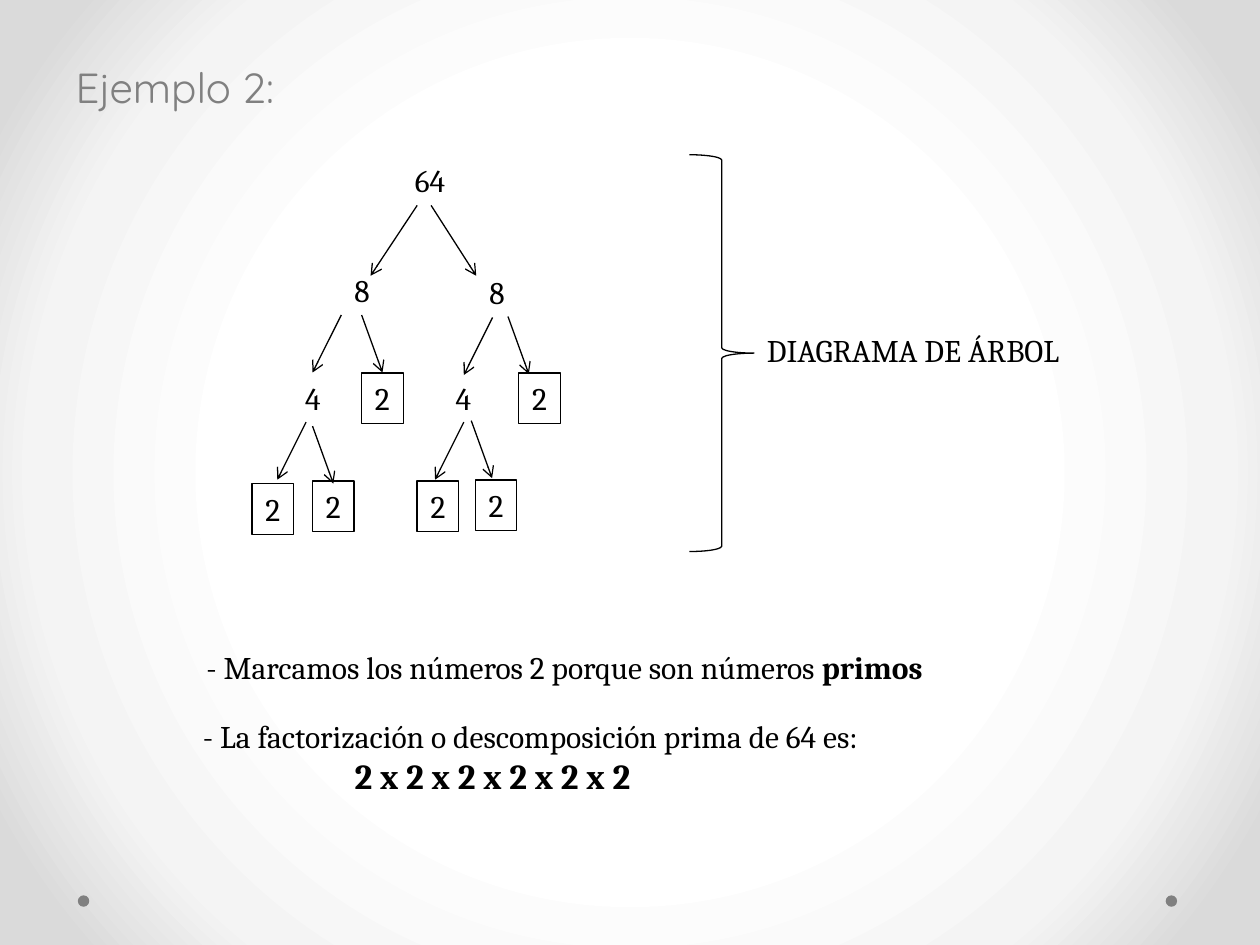
from lxml.etree import SubElement
from pptx import Presentation
from pptx.dml.color import RGBColor
from pptx.enum.shapes import MSO_CONNECTOR, MSO_SHAPE
from pptx.enum.text import MSO_ANCHOR, PP_ALIGN
from pptx.oxml import parse_xml
from pptx.oxml.ns import nsdecls, qn
from pptx.util import Cm, Pt

COLORS = {"ink": "000000", "gray": "808080", "center": "FFFFFF", "middle": "F4F4F4", "edge": "DADADA"}


def add_text(left, top, width, height, lines, centered=False):
    box = page.shapes.add_textbox(Cm(left), Cm(top), Cm(width), Cm(height))
    frame = box.text_frame
    frame.word_wrap = True
    if centered:
        frame.margin_left = frame.margin_right = 0
    frame.text = "\n".join(lines)
    for para in frame.paragraphs:
        para.alignment = PP_ALIGN.CENTER if centered else PP_ALIGN.LEFT
        para.font.name = "Cambria"
        for span in para.runs:
            span.font.name = "Cambria"
            span.font.size = Pt(18)
            span.font.color.rgb = RGBColor.from_string(COLORS["ink"])
    return box


def add_arrow(x1, y1, x2, y2):
    arrow = page.shapes.add_connector(MSO_CONNECTOR.STRAIGHT, Cm(x1), Cm(y1), Cm(x2), Cm(y2))
    arrow.line.color.rgb = RGBColor.from_string(COLORS["ink"])
    arrow.line.width = Pt(0.75)
    SubElement(arrow.line._get_or_add_ln(), qn("a:tailEnd"), type="arrow")
    SubElement(arrow._element.spPr, qn("a:effectLst"))


deck = Presentation()
deck.slide_width, deck.slide_height = Cm(25.4), Cm(19.05)
page = deck.slides.add_slide(deck.slide_layouts[5])

background = page.background.fill
background.gradient()
gradient = page._element.cSld.find(".//" + qn("a:gradFill"))
for child in list(gradient):
    gradient.remove(child)
stops = SubElement(gradient, qn("a:gsLst"))
for position, name in ((50, "center"), (76, "middle"), (92, "edge")):
    stop = SubElement(stops, qn("a:gs"), pos=str(position * 1000))
    SubElement(stop, qn("a:srgbClr"), val=COLORS[name])
gradient.append(parse_xml(
    f'<a:path {nsdecls("a")} path="circle"><a:fillToRect l="50000" t="50000" r="50000" b="50000"/></a:path>'
))

for left in (23.5, 1.57):
    dot = page.shapes.add_shape(MSO_SHAPE.OVAL, Cm(left), Cm(18.05), Cm(0.23), Cm(0.23))
    dot.shadow.inherit = False
    dot.fill.solid()
    dot.fill.fore_color.rgb = RGBColor.from_string(COLORS["gray"])
    dot.line.fill.background()

title = page.shapes.title
title.left, title.top, title.width, title.height = Cm(1.27), Cm(1.12), Cm(22.86), Cm(1.5)
title.text_frame.text = "Ejemplo 2:"
title.text_frame.vertical_anchor = MSO_ANCHOR.TOP
heading = title.text_frame.paragraphs[0]
heading.alignment = PP_ALIGN.LEFT
heading.runs[0].font.name = "Quicksand"
heading.runs[0].font.size = Pt(24)
heading.runs[0].font.color.rgb = RGBColor.from_string(COLORS["gray"])

add_text(8.1, 3.12, 1.14, 1.02, ["64"], centered=True)
composites = [("8", 6.88, 5.33), ("8", 9.6, 5.38), ("4", 5.89, 7.52), ("4", 8.92, 7.52)]
for number, left, top in composites:
    add_text(left, top, 0.84, 1.02, [number], centered=True)

primes = [(7.29, 7.52), (10.46, 7.52), (9.58, 9.68), (8.41, 9.7), (6.3, 9.7), (5.08, 9.75)]
for left, top in primes:
    prime = add_text(left, top, 0.84, 1.02, ["2"], centered=True)
    prime.line.color.rgb = RGBColor.from_string(COLORS["ink"])
    prime.line.width = Pt(0.75)

add_arrow(8.41, 4.14, 7.47, 5.56)
add_arrow(8.69, 4.14, 9.6, 5.56)
for x, y in ((6.88, 6.35), (9.93, 6.4), (6.17, 8.51), (9.35, 8.51)):
    add_arrow(x, y, x - 0.58, y + 1.16)
for x, y in ((7.29, 6.35), (10.24, 6.38), (6.3, 8.59), (9.5, 8.48)):
    add_arrow(x, y, x + 0.42, y + 1.16)

brace = page.shapes.add_shape(MSO_SHAPE.RIGHT_BRACE, Cm(13.9), Cm(3.12), Cm(1.3), Cm(8))
brace.shadow.inherit = False
brace.fill.background()
brace.line.color.rgb = RGBColor.from_string(COLORS["ink"])
brace.line.width = Pt(0.75)
add_text(15.21, 6.55, 7.62, 1.02, ["DIAGRAMA DE ÁRBOL"])

reason = add_text(3.91, 12.93, 16.26, 1.02, ["- Marcamos los números 2 porque son números "])
span = reason.text_frame.paragraphs[0].add_run()
span.text = "primos"
span.font.name = "Cambria"
span.font.size = Pt(18)
span.font.bold = True
span.font.color.rgb = RGBColor.from_string(COLORS["ink"])

result = add_text(3.84, 14.33, 15.09, 1.88, [
    "- La factorización o descomposición prima de 64 es:",
    "2 x 2 x 2 x 2 x 2 x 2",
])
product = result.text_frame.paragraphs[1]
product._p.get_or_add_pPr().set("marL", str(Cm(3.06)))
product.runs[0].font.size = Pt(20)
product.runs[0].font.bold = True

deck.save("out.pptx")
